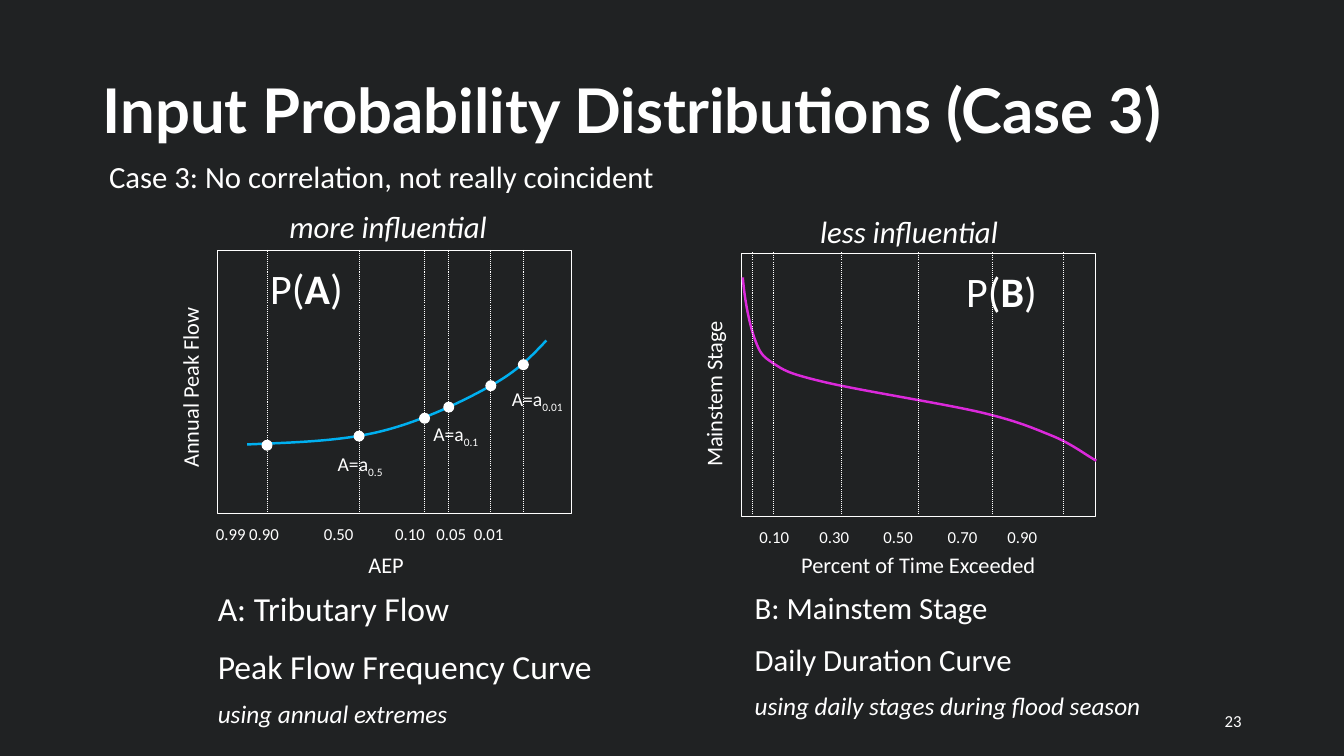
import pptx
import pptx.dml.color
import pptx.enum.dml
import pptx.enum.shapes
import pptx.enum.text
import pptx.oxml.xmlchemy
import pptx.util

Cm = pptx.util.Cm
Pt = pptx.util.Pt
ALIGN = pptx.enum.text.PP_ALIGN
ANCHOR = pptx.enum.text.MSO_ANCHOR
SHAPE = pptx.enum.shapes.MSO_SHAPE
WHITE = "FFFFFF"
PLOT_W, PLOT_H = 8.92, 6.63
DOT = 0.25

TRIBUTARY = {
    "curve": [(0.74, 4.88), (1.91, 4.83), (3.1, 4.8), (4.11, 4.55), (5.16, 4.29),
              (6.2, 3.78), (6.88, 3.4), (7.57, 3.02), (7.92, 2.64), (8.28, 2.26)],
    "color": "00B0F0",
    "grid": [1.24, 3.56, 5.21, 5.82, 6.88, 7.7],
    "dots": [4.9, 4.67, 4.22, 3.94, 3.4, 2.87],
    "points": [("0.01", 7.16, 3.3), ("0.5", 2.77, 4.95), ("0.1", 5.18, 4.19)],
    "ticks": ["0.99", "0.90", "0.50", "0.10", "0.05", "0.01"],
    "tabs": [0.84, 2.72, 4.52, 5.56, 6.5],
    "tick_box": (-0.3, 6.76, 9.86, 0.76),
    "x_title": "AEP", "x_box": (-0.28, 7.44, 9.04, 0.94),
    "y_title": "Annual Peak Flow", "y_box": (-3.68, 2.26, 5.97, 0.94),
    "letter": "A", "letter_box": (1.07, 0.18, 3.96, 1.52),
    "weight": "more influential", "weight_box": (0.86, -1.22, 6.86, 1.19),
    "weight_align": ALIGN.CENTER,
    "summary": ["A: Tributary Flow", "Peak Flow Frequency Curve", "using annual extremes"],
    "summary_size": 24, "summary_box": (-0.25, 8.38, 12.4, 3.99),
}

MAINSTEM = {
    "curve": [(0.03, 0.61), (0.08, 1.22), (0.2, 1.8), (0.33, 2.16), (0.46, 2.51),
              (0.51, 2.59), (0.79, 2.77), (1.07, 2.95), (1.14, 3.02), (2.01, 3.23),
              (2.9, 3.45), (5.03, 3.78), (6.02, 4.01), (6.99, 4.24), (7.37, 4.42),
              (7.87, 4.62), (8.36, 4.83), (8.71, 5.11), (8.94, 5.23)],
    "color": "DB29DB",
    "grid": [0.28, 0.81, 2.51, 4.45, 6.32, 8.1],
    "dots": [],
    "points": [],
    "ticks": ["0.10", "0.30", "0.50", "0.70", "0.90"],
    "tabs": [1.51, 3.12, 4.74, 6.25],
    "tick_box": (0.2, 6.78, 9.86, 0.76),
    "x_title": "Percent of Time Exceeded", "x_box": (0.66, 7.39, 7.59, 0.94),
    "y_title": "Mainstem Stage", "y_box": (-3.23, 2.64, 5.05, 0.94),
    "letter": "B", "letter_box": (5.41, 0.18, 3.96, 1.52),
    "weight": "less influential", "weight_box": (1.73, -1.14, 6.86, 1.19),
    "weight_align": ALIGN.LEFT,
    "summary": ["B: Mainstem Stage", "Daily Duration Curve",
                "using daily stages during flood season"],
    "summary_size": 22, "summary_box": (0.08, 8.33, 11.84, 3.76),
}


def rgb(value):
    """Turn a hex string into a colour."""
    return pptx.dml.color.RGBColor.from_string(value)


def element(tag, **attributes):
    """Make a drawing element with the given attributes."""
    node = pptx.oxml.xmlchemy.OxmlElement(tag)
    for key, value in attributes.items():
        node.set(key, str(value))
    return node


def shift(box, left, top):
    """Move a relative box to the place of its panel."""
    return box[0] + left, box[1] + top, box[2], box[3]


def add_run(p, text, size, baseline=0, **extra):
    """Append a formatted run to a paragraph."""
    r = p.add_run()
    r.text = text
    for key, value in {"name": "Calibri", "size": Pt(size), **extra}.items():
        setattr(r.font, key, value)
    r.font.color.rgb = rgb(WHITE)
    if baseline:
        r._r.get_or_add_rPr().set("baseline", str(baseline))


def add_text(s, box, paragraphs, align=ALIGN.LEFT, rotation=0, tabs=(), anchor=ANCHOR.TOP):
    """Add a text box whose paragraphs are lists of (text, format) runs."""
    sp = s.shapes.add_textbox(*map(Cm, box))
    sp.rotation = rotation
    tf = sp.text_frame
    frame = {"word_wrap": True, "vertical_anchor": anchor,
             "auto_size": pptx.enum.text.MSO_AUTO_SIZE.SHAPE_TO_FIT_TEXT}
    for key, value in frame.items():
        setattr(tf, key, value)
    for i, runs in enumerate(paragraphs):
        p = tf.add_paragraph() if i else tf.paragraphs[0]
        p.alignment = align
        if tabs:
            stops = element("a:tabLst")
            for tab in tabs:
                stops.append(element("a:tab", pos=int(Cm(tab)), algn="l"))
            p._p.get_or_add_pPr().append(stops)
        if i:
            p.space_before = Pt(runs[0][1]["size"] / 2)
        for text, style in runs:
            add_run(p, text, **style)


def style_shape(sp, line, width, fill=None):
    """Set fill and line of a shape and drop its shadow."""
    sp.shadow.inherit = False
    if fill:
        sp.fill.solid()
        sp.fill.fore_color.rgb = rgb(fill)
    else:
        sp.fill.background()
    sp.line.color.rgb = rgb(line)
    sp.line.width = Pt(width)


def add_curve(s, points, color):
    """Draw a smooth curve through cubic Bézier control points."""
    points = [(Cm(x), Cm(y)) for x, y in points]
    builder = s.shapes.build_freeform(*points[0])
    builder.add_line_segments(points[1:], close=False)
    sp = builder.convert_to_shape()
    style_shape(sp, color, 1.75)
    segments = sp._element.xpath(".//a:lnTo")
    for i in range(0, len(segments), 3):
        bezier = element("a:cubicBezTo")
        segments[i].addprevious(bezier)
        for segment in segments[i:i + 3]:
            bezier.append(segment[0])
            segment.getparent().remove(segment)


def add_gridline(s, x, top):
    """Draw a dotted vertical line over the plot height."""
    line = s.shapes.add_connector(pptx.enum.shapes.MSO_CONNECTOR.STRAIGHT,
                                  Cm(x), Cm(top + PLOT_H - 0.05), Cm(x), Cm(top - 0.03))
    line.line.color.rgb = rgb(WHITE)
    line.line.width = Pt(0.75)
    line.line.dash_style = pptx.enum.dml.MSO_LINE.ROUND_DOT
    line._element.spPr.append(element("a:effectLst"))


def add_panel(s, left, top, d):
    """Place one distribution plot with its labels and summary."""
    plot = s.shapes.add_shape(SHAPE.RECTANGLE, *map(Cm, (left, top, PLOT_W, PLOT_H)))
    style_shape(plot, WHITE, 0.75)
    add_curve(s, [(left + x, top + y) for x, y in d["curve"]], d["color"])
    for x in d["grid"]:
        add_gridline(s, left + x, top)
    for x, y in zip(d["grid"], d["dots"]):
        box = shift((x - DOT / 2, y - DOT / 2, DOT, DOT), left, top)
        style_shape(s.shapes.add_shape(SHAPE.OVAL, *map(Cm, box)), WHITE, 0.75, WHITE)
    for subscript, x, y in d["points"]:
        runs = [("A=a", {"size": 14}), (subscript, {"size": 14, "baseline": -25000})]
        add_text(s, shift((x, y, 2.95, 0.84), left, top), [runs])

    def label(key, paragraphs, **options):
        """Add a text in the panel's named box."""
        add_text(s, shift(d[key], left, top), paragraphs, **options)

    label("x_box", [[(d["x_title"], {"size": 16})]], align=ALIGN.CENTER)
    label("y_box", [[(d["y_title"], {"size": 16})]], rotation=270)
    label("tick_box", [[("\t".join(d["ticks"]), {"size": 12})]], tabs=d["tabs"])
    label("letter_box", [[("P(", {"size": 30}), (d["letter"], {"size": 30, "bold": True}),
                          (")", {"size": 30})]])
    label("weight_box", [[(d["weight"], {"size": 22, "italic": True})]],
          align=d["weight_align"])
    styles = [{"size": d["summary_size"]}] * 2 + [{"size": 18, "italic": True}]
    label("summary_box", [[pair] for pair in zip(d["summary"], styles)])


def add_heading(s, left, top, width):
    """Place the title, the case line and the page number."""
    title = s.shapes.title
    place = {"left": left, "top": top, "width": width, "height": 3.68}
    for key, value in place.items():
        setattr(title, key, Cm(value))
    tf = title.text_frame
    tf.vertical_anchor = ANCHOR.MIDDLE
    tf.auto_size = pptx.enum.text.MSO_AUTO_SIZE.NONE
    p = tf.paragraphs[0]
    p.alignment = ALIGN.LEFT
    p.line_spacing = 0.9
    add_run(p, "Input Probability Distributions (Case 3)", 44, name="Lato", bold=True)
    add_text(s, (left + 0.17, top + 2.82, 18.95, 1.19),
             [[("Case 3: No correlation, not really coincident", {"size": 22})]])
    add_text(s, (left + width - 7.62, top + 16.63, 7.62, 1.02), [[("23", {"size": 12})]],
             align=ALIGN.RIGHT, anchor=ANCHOR.MIDDLE)


def main():
    """Build and save the slide."""
    prs = pptx.Presentation()
    prs.slide_width, prs.slide_height = Cm(33.87), Cm(19.05)
    s = prs.slides.add_slide(prs.slide_layouts[5])
    s.background.fill.solid()
    s.background.fill.fore_color.rgb = rgb("202223")
    add_heading(s, 2.33, 1.02, 29.21)
    add_panel(s, 5.49, 6.32, TRIBUTARY)
    add_panel(s, 18.69, 6.38, MAINSTEM)
    prs.save("out.pptx")


if __name__ == "__main__":
    main()
